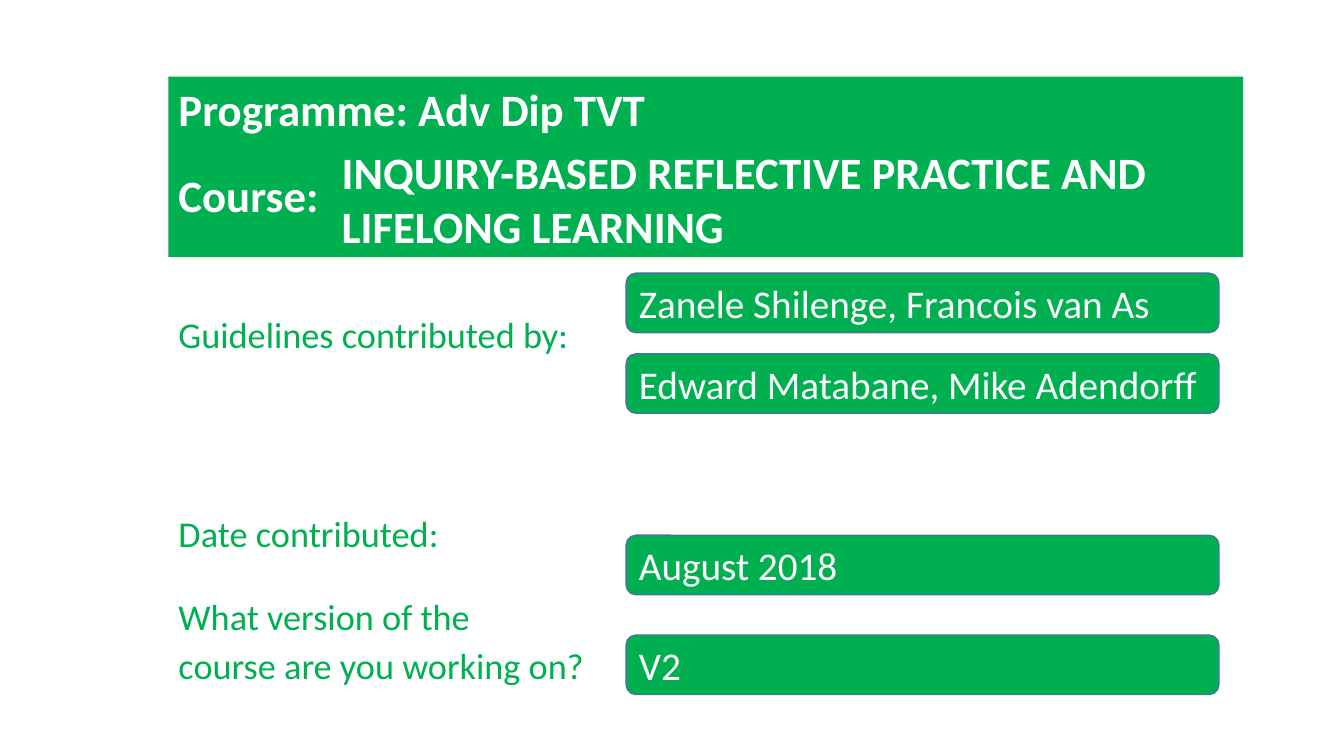
"""Build the course title slide with its contributor details."""
from pptx import Presentation
from pptx.dml.color import RGBColor
from pptx.enum.shapes import MSO_SHAPE as SHAPE
from pptx.enum.text import MSO_ANCHOR as ANCHOR, MSO_AUTO_SIZE as AUTO, PP_ALIGN as ALIGN
from pptx.util import Inches, Pt

GREEN = RGBColor(0x00, 0xB0, 0x50)
WHITE = RGBColor(0xFF, 0xFF, 0xFF)
EDGE = RGBColor(0x43, 0x73, 0x9E)

HEADING = [("Programme: Adv Dip TVT", 0), ("Course:", 23)]
COURSE = [("INQUIRY-BASED REFLECTIVE PRACTICE AND LIFELONG LEARNING", 0)]
LABELS = [
    ("Guidelines contributed by:", 0),
    ("Date contributed:", 117),
    ("What version of the", 35),
    ("course are you working on?", 10),
]
ANSWERS = [
    ("Zanele Shilenge, Francois van As", 2.71),
    ("Edward Matabane, Mike Adendorff", 3.51),
    ("August 2018", 5.31),
    ("V2", 6.3),
]
LEFT, ANSWER_LEFT = 1.67, 6.21
ANSWER_W, ANSWER_H = 5.88, 0.59


def place(sp, left, top, width, height):
    sp.left, sp.top = Inches(left), Inches(top)
    sp.width, sp.height = Inches(width), Inches(height)


def write(sp, lines, size, color, bold=False, anchor=ANCHOR.TOP, spacing=1.0):
    tf = sp.text_frame
    tf.word_wrap = True
    tf.auto_size = AUTO.NONE
    tf.vertical_anchor = anchor
    tf.text = "\n".join(text for text, _ in lines)
    for p, (_, before) in zip(tf.paragraphs, lines):
        p.alignment = ALIGN.LEFT
        p.line_spacing = spacing
        p.space_before = Pt(before)
        font = p.runs[0].font
        font.name, font.size, font.bold = "Calibri", Pt(size), bold
        font.color.rgb = color


def add_answer(s, text, top):
    sp = s.shapes.add_shape(SHAPE.ROUNDED_RECTANGLE, 0, 0, 0, 0)
    place(sp, ANSWER_LEFT, top, ANSWER_W, ANSWER_H)
    sp.shadow.inherit = False
    sp.fill.solid()
    sp.fill.fore_color.rgb = GREEN
    sp.line.color.rgb = EDGE
    sp.line.width = Pt(1)
    write(sp, [(text, 0)], 28, WHITE, anchor=ANCHOR.MIDDLE)


def main():
    prs = Presentation()
    prs.slide_width, prs.slide_height = Inches(13.33), Inches(7.5)
    s = prs.slides.add_slide(prs.slide_layouts[0])

    title = s.shapes.title
    place(title, LEFT, 0.76, 10.66, 1.79)
    title.fill.solid()
    title.fill.fore_color.rgb = GREEN
    write(title, HEADING, 32, WHITE, bold=True)

    labels = s.placeholders[1]
    place(labels, LEFT, 2.58, 10.42, 4.83)
    write(labels, LABELS, 25.9, GREEN, spacing=0.8)
    labels.text_frame.margin_top = Inches(0.6)

    course = s.shapes.add_textbox(0, 0, 0, 0)
    place(course, 3.29, 1.39, 8.59, 1.18)
    write(course, COURSE, 32, WHITE, bold=True)

    for text, top in ANSWERS:
        add_answer(s, text, top)
    prs.save("out.pptx")


if __name__ == "__main__":
    main()
